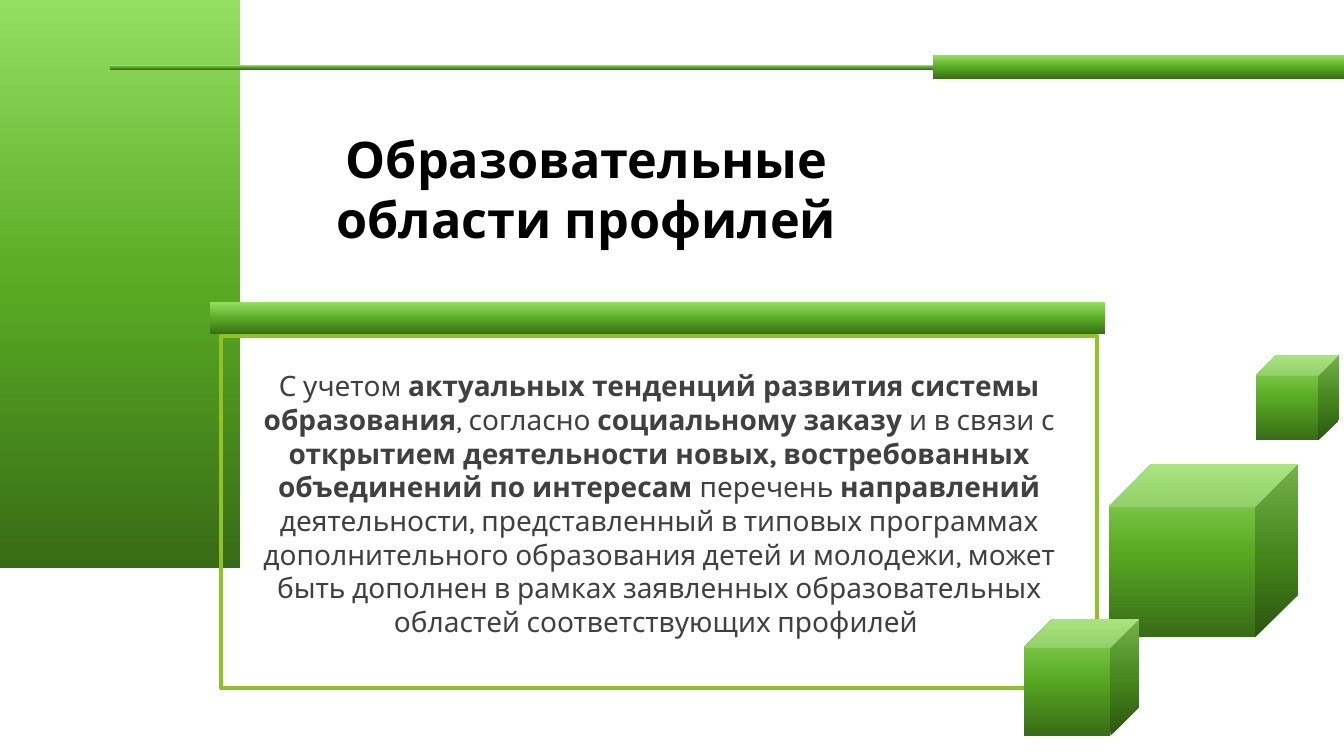
from lxml.etree import SubElement
from pptx import Presentation
from pptx.dml.color import RGBColor
from pptx.enum.shapes import MSO_SHAPE as Preset
from pptx.enum.text import MSO_ANCHOR as Anchor, MSO_AUTO_SIZE as AutoSize, PP_ALIGN as Align
from pptx.oxml.ns import qn
from pptx.util import Cm, Pt

FONT = "Karla"
GREENS = [(0, "386B16"), (48, "58A823"), (100, "94DE61")]
TITLE = "Образовательные области профилей"
# Plain and bold pieces alternate, starting with a plain one.
BODY = [
    "С учетом ",
    "актуальных тенденций развития системы образования",
    ", согласно ",
    "социальному заказу ",
    "и в связи с ",
    "открытием деятельности новых, востребованных объединений по интересам ",
    "перечень ",
    "направлений ",
    "деятельности, представленный в типовых программах дополнительного образования "
    "детей и молодежи, может быть дополнен в рамках заявленных образовательных "
    "областей соответствующих профилей ",
]


def color(value):
    return RGBColor.from_string(value)


def add_shape(slide, preset, box):
    shape = slide.shapes.add_shape(preset, *map(Cm, box))
    shape.shadow.inherit = False
    return shape


def add_green(slide, preset, box):
    """Add a borderless shape shaded from light green (top) to dark green."""
    shape = add_shape(slide, preset, box)
    shape.line.fill.background()
    shape.fill.gradient()
    shape.fill.gradient_angle = 90
    stops = shape._element.spPr.find(qn("a:gradFill")).find(qn("a:gsLst"))
    for stop in list(stops):
        stops.remove(stop)
    for percent, value in GREENS:
        stop = SubElement(stops, qn("a:gs"), pos=str(percent * 1000))
        SubElement(stop, qn("a:srgbClr"), val=value)


def add_frame(slide, box):
    frame = add_shape(slide, Preset.RECTANGLE, box)
    frame.fill.background()
    frame.line.color.rgb = color("90C226")
    frame.line.width = Pt(3)


def format_placeholder(placeholder, box, size, text_color):
    """Place the placeholder and return its formatted first paragraph."""
    placeholder.left, placeholder.top, placeholder.width, placeholder.height = map(Cm, box)
    text_frame = placeholder.text_frame
    text_frame.word_wrap = True
    text_frame.auto_size = AutoSize.NONE
    text_frame.vertical_anchor = Anchor.TOP
    paragraph = text_frame.paragraphs[0]
    paragraph.alignment = Align.CENTER
    paragraph.space_before = Pt(0)
    paragraph.font.name = FONT
    paragraph.font.size = Pt(size)
    paragraph.font.color.rgb = color(text_color)
    return paragraph


def fill_title(slide):
    paragraph = format_placeholder(
        slide.shapes.title, (6.69, 3.1, 16.18, 4.01), 36, "000000")
    paragraph.font.bold = True
    paragraph.add_run().text = TITLE


def fill_body(slide):
    paragraph = format_placeholder(
        slide.placeholders[1], (6.35, 9.17, 20.52, 7.9), 20, "404040")
    properties = paragraph._p.get_or_add_pPr()
    properties.set("marL", "0")
    properties.set("indent", "0")
    bullet = SubElement(properties, qn("a:buNone"))
    properties.find(qn("a:defRPr")).addprevious(bullet)
    for index, piece in enumerate(BODY):
        run = paragraph.add_run()
        run.text = piece
        run.font.bold = index % 2 == 1


def main():
    presentation = Presentation()
    presentation.slide_width, presentation.slide_height = Cm(33.87), Cm(19.05)
    slide = presentation.slides.add_slide(presentation.slide_layouts[1])
    fill_title(slide)
    fill_body(slide)

    side_panel = (0, 0, 6.05, 14.31)
    body_bar = (5.3, 7.62, 22.56, 0.81)
    top_bar = (23.52, 1.39, 10.35, 0.61)
    top_rule = (2.77, 1.63, 20.75, 0.13)
    for box in (side_panel, body_bar, top_bar, top_rule):
        add_green(slide, Preset.RECTANGLE, box)

    add_frame(slide, (5.57, 8.47, 22.07, 8.86))

    large_cube = (27.94, 11.69, 4.78, 4.37)
    medium_cube = (25.81, 15.59, 2.9, 2.95)
    small_cube = (31.65, 8.94, 2.09, 2.16)
    for box in (large_cube, medium_cube, small_cube):
        add_green(slide, Preset.CUBE, box)

    presentation.save("out.pptx")


if __name__ == "__main__":
    main()
